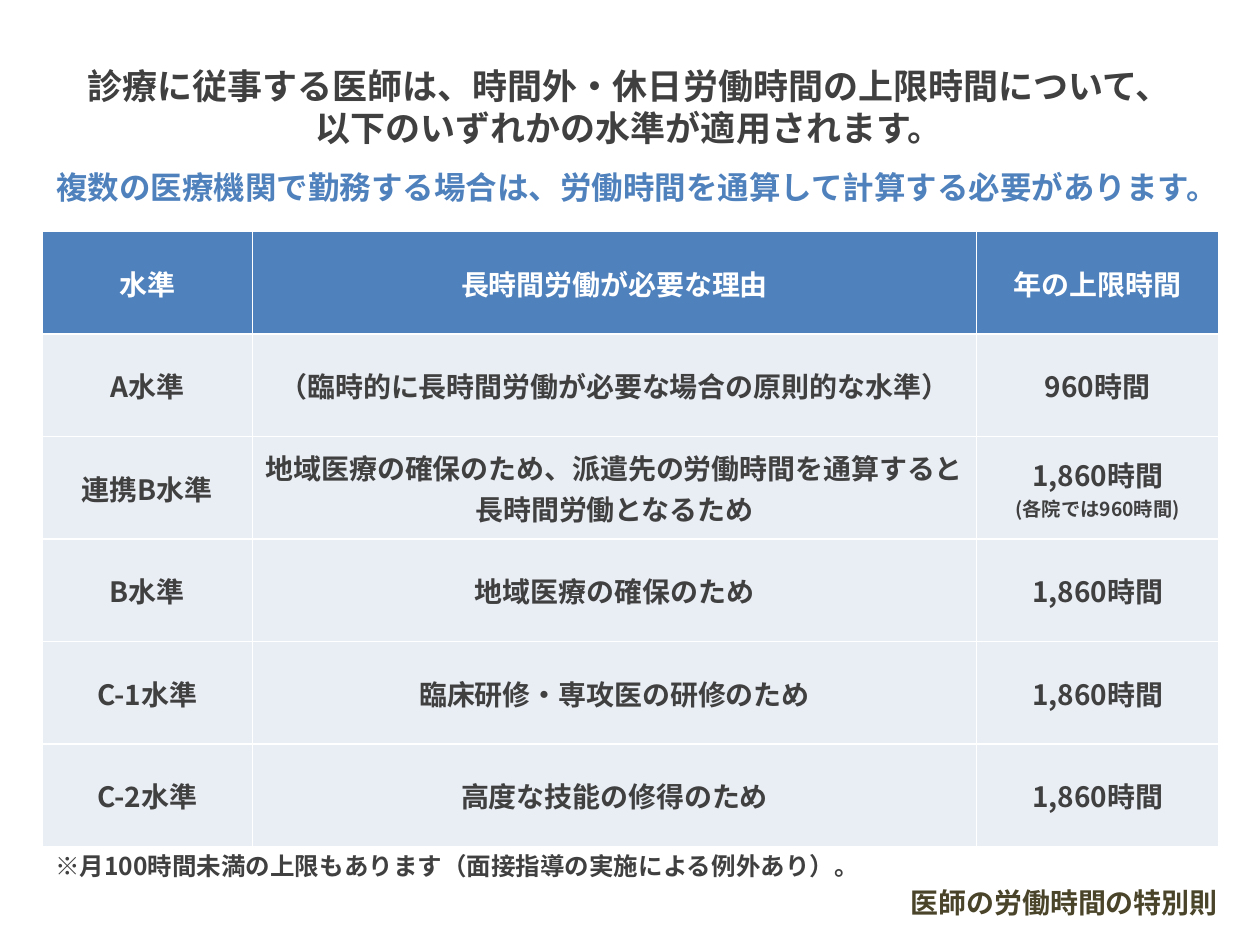
from dataclasses import dataclass

from lxml import etree
from pptx import Presentation
from pptx.dml.color import RGBColor
from pptx.enum.text import MSO_ANCHOR, MSO_AUTO_SIZE, PP_ALIGN
from pptx.oxml.ns import qn
from pptx.shapes.autoshape import Shape
from pptx.slide import Slide
from pptx.text.text import TextFrame
from pptx.util import Cm, Pt

CENTER, LEFT = PP_ALIGN.CENTER, PP_ALIGN.LEFT
MIDDLE, TOP = MSO_ANCHOR.MIDDLE, MSO_ANCHOR.TOP
NO_AUTOFIT = MSO_AUTO_SIZE.NONE


@dataclass(frozen=True)
class Theme:
    font: str = "Noto Sans CJK JP"
    text: str = "404040"
    accent: str = "4F81BD"
    footer: str = "4A452A"
    row: str = "E9EDF4"
    white: str = "FFFFFF"
    title_size: int = 20
    lead_size: int = 18
    body_size: int = 16
    note_size: int = 14
    detail_size: int = 11


THEME = Theme()


@dataclass(frozen=True)
class TextStyle:
    size: int
    color: str
    alignment: PP_ALIGN = CENTER
    line_spacing: float | Pt | None = None


@dataclass(frozen=True)
class Box:
    left: float
    top: float
    width: float
    height: float

    def lengths(self) -> tuple[Cm, Cm, Cm, Cm]:
        return Cm(self.left), Cm(self.top), Cm(self.width), Cm(self.height)


@dataclass(frozen=True)
class Caption:
    text: str
    box: Box
    style: TextStyle
    fill: str | None = None


@dataclass(frozen=True)
class Level:
    name: str
    reason: str
    limit: str
    detail: str = ""


TITLE = Caption(
    "診療に従事する医師は、時間外・休日労働時間の上限時間について、\n以下のいずれかの水準が適用されます。",
    Box(0.99, 1.12, 23.39, 2.16),
    TextStyle(THEME.title_size, THEME.text, line_spacing=Pt(24)),
    THEME.white,
)
CAPTIONS = [
    Caption(
        "※月100時間未満の上限もあります（面接指導の実施による例外あり）。",
        Box(0.86, 17.15, 19.53, 0.86),
        TextStyle(THEME.note_size, THEME.text, LEFT),
        THEME.white,
    ),
    Caption(
        "複数の医療機関で勤務する場合は、労働時間を通算して計算する必要があります。",
        Box(0.56, 3.38, 24.56, 1.09),
        TextStyle(THEME.lead_size, THEME.accent),
    ),
    Caption(
        "医師の労働時間の特別則",
        Box(18.11, 17.93, 7.19, 0.61),
        TextStyle(THEME.body_size, THEME.footer, LEFT, 0.9),
    ),
]

TABLE_BOX = Box(0.85, 4.67, 23.71, 12.4)
COLUMN_WIDTHS = (4.24, 14.6, 4.87)
HEADER = Level("水準", "長時間労働が必要な理由", "年の上限時間")
LEVELS = [
    Level("A水準", "（臨時的に長時間労働が必要な場合の原則的な水準）", "960時間"),
    Level(
        "連携B水準",
        "地域医療の確保のため、派遣先の労働時間を通算すると長時間労働となるため",
        "1,860時間",
        "(各院では960時間)",
    ),
    Level("B水準", "地域医療の確保のため", "1,860時間"),
    Level("C-1水準", "臨床研修・専攻医の研修のため", "1,860時間"),
    Level("C-2水準", "高度な技能の修得のため", "1,860時間"),
]


def apply_format(target: object, values: dict[str, object]) -> None:
    for name, value in values.items():
        setattr(target, name, value)


def write_lines(frame: TextFrame, lines: list[tuple[str, TextStyle]]) -> None:
    """Write one paragraph for each line of text and its style."""
    for index, (text, style) in enumerate(lines):
        paragraph = frame.add_paragraph() if index else frame.paragraphs[0]
        apply_format(paragraph, {
            "alignment": style.alignment, "line_spacing": style.line_spacing,
        })
        run = paragraph.add_run()
        run.text = text
        apply_format(run.font, {
            "size": Pt(style.size), "bold": True, "name": THEME.font,
        })
        run.font.color.rgb = RGBColor.from_string(style.color)
        east_asian = etree.SubElement(run.font._element, qn("a:ea"))
        east_asian.set("typeface", THEME.font)


def fill_caption(shape: Shape, caption: Caption, top_margin: float = 0) -> None:
    if caption.fill:
        shape.fill.solid()
        shape.fill.fore_color.rgb = RGBColor.from_string(caption.fill)
    apply_format(shape.text_frame, {
        "word_wrap": True, "auto_size": NO_AUTOFIT, "vertical_anchor": TOP,
        "margin_top": Cm(top_margin), "margin_bottom": 0,
    })
    write_lines(
        shape.text_frame,
        [(line, caption.style) for line in caption.text.split("\n")],
    )


def add_title(slide: Slide) -> None:
    title = slide.shapes.title
    left, top, width, height = TITLE.box.lengths()
    apply_format(title, {"left": left, "top": top, "width": width, "height": height})
    fill_caption(title, TITLE, top_margin=0.18)


def add_level_table(slide: Slide) -> None:
    rows = [HEADER, *LEVELS]
    table = slide.shapes.add_table(
        len(rows), len(COLUMN_WIDTHS), *TABLE_BOX.lengths()
    ).table
    table.horz_banding = False
    for column, width in zip(table.columns, COLUMN_WIDTHS):
        column.width = Cm(width)
    for row, level in zip(table.rows, rows):
        is_header = level is HEADER
        fill = THEME.accent if is_header else THEME.row
        color = THEME.white if is_header else THEME.text
        body = TextStyle(THEME.body_size, color)
        contents = [[(text, body)] for text in (level.name, level.reason, level.limit)]
        if level.detail:
            contents[-1].append((level.detail, TextStyle(THEME.detail_size, color)))
        for cell, lines in zip(row.cells, contents):
            apply_format(cell, {
                "vertical_anchor": MIDDLE,
                "margin_left": Cm(0.15), "margin_right": Cm(0.15),
            })
            cell.fill.solid()
            cell.fill.fore_color.rgb = RGBColor.from_string(fill)
            write_lines(cell.text_frame, lines)


def main() -> None:
    presentation = Presentation()
    apply_format(presentation, {"slide_width": Cm(25.4), "slide_height": Cm(19.05)})
    slide = presentation.slides.add_slide(
        presentation.slide_layouts.get_by_name("Title Only")
    )
    add_title(slide)
    add_level_table(slide)
    for caption in CAPTIONS:
        fill_caption(slide.shapes.add_textbox(*caption.box.lengths()), caption)
    presentation.save("out.pptx")


if __name__ == "__main__":
    main()
